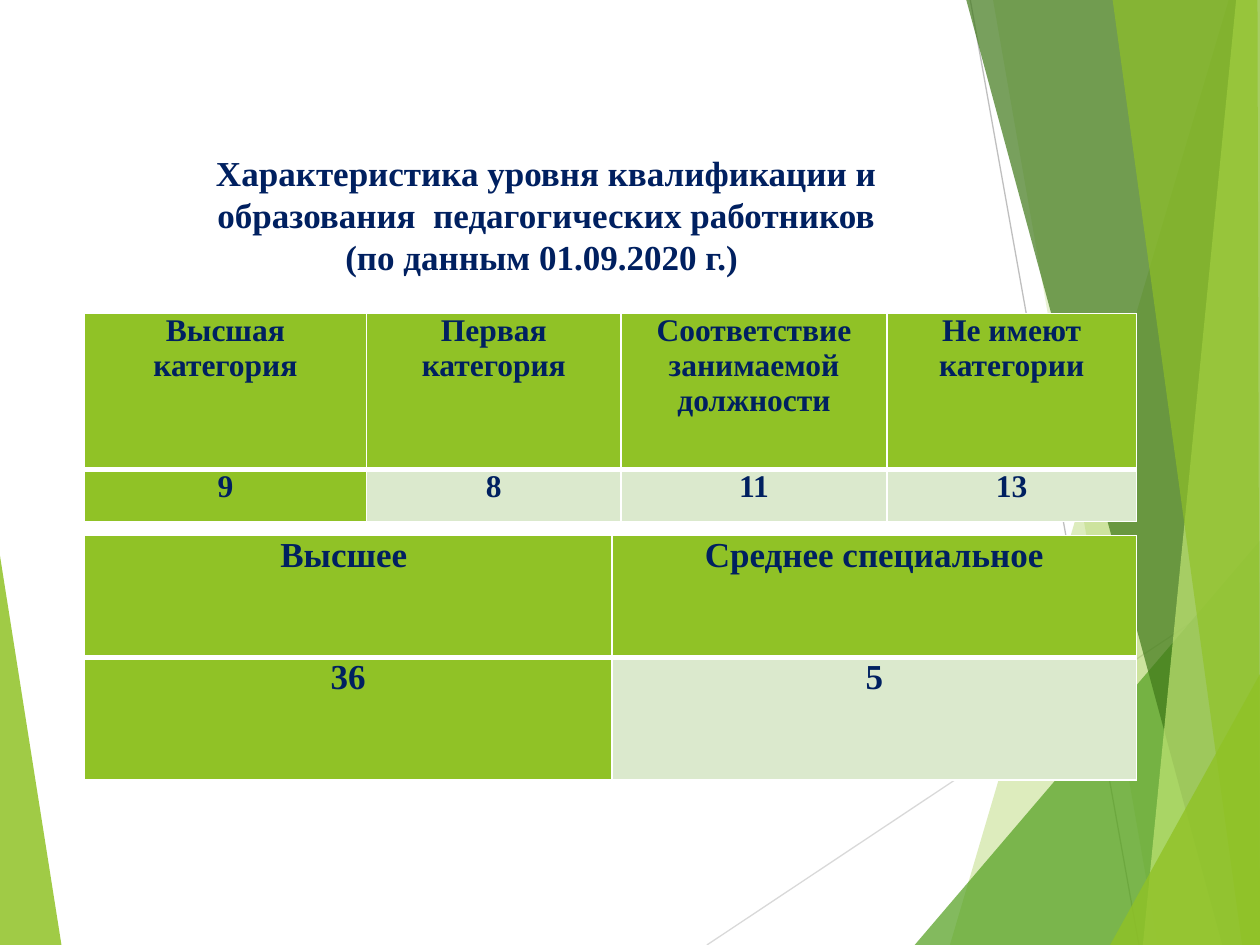
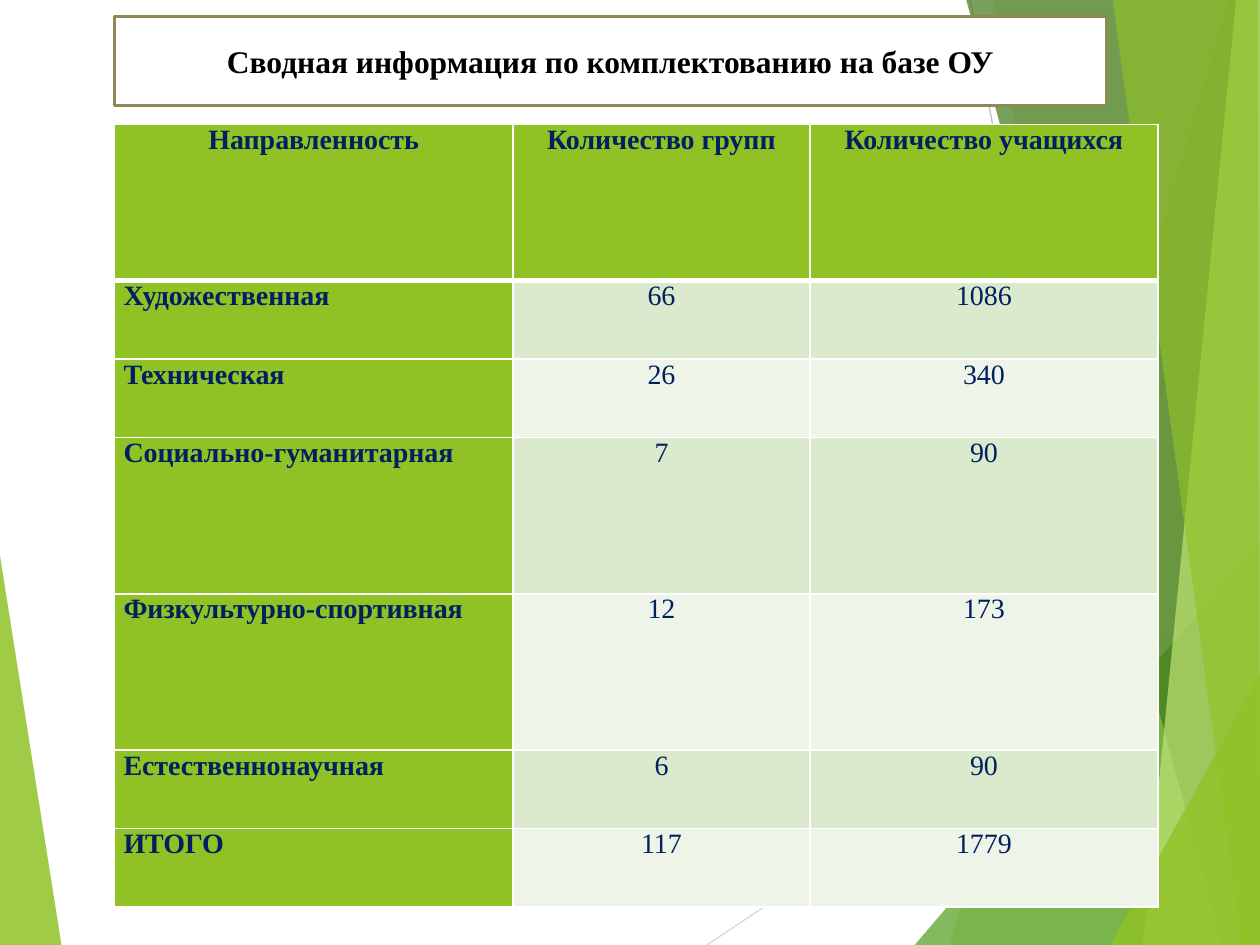
from lxml.etree import SubElement
from pptx import Presentation
from pptx.dml.color import RGBColor
from pptx.enum.shapes import MSO_CONNECTOR, MSO_SHAPE
from pptx.enum.text import MSO_ANCHOR, PP_ALIGN
from pptx.oxml.ns import qn
from pptx.util import Cm, Pt

SLIDE_WIDTH, SLIDE_HEIGHT = 25.4, 19.05
FONT = "Times New Roman"
GREEN, NAVY, WHITE, BLACK = "90C226", "002060", "FFFFFF", "000000"
BANDS = ["DBE9CD", "EEF4E8"]
TITLE_FORMAT = {"name": FONT, "bold": True}
CELL_MARGINS = {"margin_left": Cm(0.18), "margin_right": Cm(0.18),
                "margin_top": 0, "margin_bottom": 0}

FACET_LINES = [
    ("D9D9D9", (14.25, 19.05), (25.4, 11.63)),
    ("BFBFBF", (19.56, 0), (22.96, 19.05)),
]
FACETS = [
    (GREEN, 85, [(0, 11.2), (1.24, 19.05), (0, 19.05)]),
    (GREEN, 30, [(24.77, 0), (19.15, 19.05), (25.4, 19.05), (25.4, 0)]),
    (GREEN, 20, [(20.02, 0), (23.34, 19.05), (25.4, 19.05), (25.4, 0)]),
    ("54A021", 72, [(18.44, 19.05), (25.4, 10.9), (25.4, 19.05)]),
    ("3F7819", 70, [(19.48, 0), (24.64, 19.05), (25.4, 19.05), (25.4, 0)]),
    ("C0E474", 70, [(24.92, 0), (23.04, 19.05), (25.4, 19.05), (25.4, 0)]),
    (GREEN, 65, [(22.43, 0), (25.04, 19.05), (25.4, 19.05), (25.35, 0)]),
    (GREEN, 80, [(22.38, 19.05), (25.4, 13.59), (25.4, 19.05)]),
]


def color(value):
    return RGBColor.from_string(value)


def set_attributes(target, values):
    for name, value in values.items():
        setattr(target, name, value)


def fill_solid(target, value):
    target.fill.solid()
    target.fill.fore_color.rgb = color(value)


def write_lines(text_frame, lines, font_format, font_color, alignment=PP_ALIGN.CENTER):
    text_frame.word_wrap = True
    for index, line in enumerate(lines):
        paragraph = text_frame.paragraphs[0] if index == 0 else text_frame.add_paragraph()
        paragraph.alignment = alignment
        run = paragraph.add_run()
        run.text = line
        set_attributes(run.font, font_format)
        run.font.color.rgb = color(font_color)


def draw_facets(slide):
    for line_color, start, end in FACET_LINES:
        connector = slide.shapes.add_connector(
            MSO_CONNECTOR.STRAIGHT, *[Cm(length) for length in start + end])
        connector.line.color.rgb = color(line_color)
        connector.line.width = Pt(0.75)
        SubElement(connector._element.spPr, qn("a:effectLst"))
    for facet_color, opacity, corners in FACETS:
        points = [(Cm(x), Cm(y)) for x, y in corners]
        builder = slide.shapes.build_freeform(*points[0])
        builder.add_line_segments(points[1:], close=True)
        facet = builder.convert_to_shape()
        facet.shadow.inherit = False
        fill_solid(facet, facet_color)
        facet.line.fill.background()
        facet_fill = facet._element.spPr.find(qn("a:solidFill"))
        SubElement(facet_fill[0], qn("a:alpha"), val=str(opacity * 1000))


def add_faceted_slide(presentation):
    slide = presentation.slides.add_slide(presentation.slide_layouts[6])
    draw_facets(slide)
    return slide


def border_cell(cell, top, bottom):
    properties = cell._tc.get_or_add_tcPr()
    for side, width in (("lnL", 1), ("lnR", 1), ("lnT", top), ("lnB", bottom)):
        border = SubElement(properties, qn(f"a:{side}"), w=str(Pt(width)))
        border_fill = SubElement(border, qn("a:solidFill"))
        SubElement(border_fill, qn("a:srgbClr"), val=WHITE)


def draw_table(slide, left, top, widths, heights, rows, size, plain_body=False):
    frame = slide.shapes.add_table(len(rows), len(widths), Cm(left), Cm(top),
                                   Cm(sum(widths)), Cm(sum(heights)))
    table = frame.table
    for column, width in zip(table.columns, widths):
        column.width = Cm(width)
    for row, height in zip(table.rows, heights):
        row.height = Cm(height)
    for row_index, values in enumerate(rows):
        for column_index, value in enumerate(values):
            cell = table.cell(row_index, column_index)
            heading = row_index == 0 or column_index == 0
            row_label = plain_body and row_index > 0 and column_index == 0
            set_attributes(cell, CELL_MARGINS)
            border_cell(cell, 3 if row_index == 1 else 1, 3 if row_index == 0 else 1)
            fill_solid(cell, GREEN if heading else BANDS[(row_index - 1) % 2])
            font_format = {"name": FONT, "size": Pt(size), "bold": heading or not plain_body}
            write_lines(cell.text_frame, [value], font_format, NAVY,
                        PP_ALIGN.LEFT if row_label else PP_ALIGN.CENTER)


def draw_open_title(slide, left, top, width, height, lines):
    title = slide.shapes.add_textbox(Cm(left), Cm(top), Cm(width), Cm(height))
    title.text_frame.vertical_anchor = MSO_ANCHOR.MIDDLE
    write_lines(title.text_frame, lines, {**TITLE_FORMAT, "size": Pt(20)}, NAVY)


def draw_framed_title(slide, left, top, width, height, text):
    title = slide.shapes.add_shape(MSO_SHAPE.RECTANGLE, Cm(left), Cm(top),
                                   Cm(width), Cm(height))
    title.shadow.inherit = False
    fill_solid(title, WHITE)
    title.line.color.rgb = color("918655")
    title.line.width = Pt(1.5)
    title.text_frame.vertical_anchor = MSO_ANCHOR.MIDDLE
    write_lines(title.text_frame, [text], {**TITLE_FORMAT, "size": Pt(18)}, BLACK)


def build_staff_slide(presentation):
    slide = add_faceted_slide(presentation)
    draw_open_title(slide, 2.31, 2.92, 17.4, 2.82, [
        "Характеристика уровня квалификации и образования  педагогических работников",
        "(по данным 01.09.2020 г.) ",
    ])
    draw_table(slide, 1.7, 6.32, [5.69, 5.13, 5.36, 5.03], [3.15, 1.04], [
        ["Высшая категория", "Первая категория",
         "Соответствие занимаемой должности", "Не имеют категории"],
        ["9", "8", "11", "13"],
    ], 18)
    draw_table(slide, 1.7, 10.8, [10.64, 10.57], [2.46] * 2, [
        ["Высшее ", "Среднее специальное"],
        ["36", "5"],
    ], 20)


def build_enrolment_slide(presentation):
    slide = add_faceted_slide(presentation)
    single, double = 1.58, 3.15
    draw_table(slide, 2.31, 2.51, [8.03, 5.99, 7.01],
               [double, single, single, double, double, single, single], [
        ["Направленность", "Количество групп", "Количество учащихся"],
        ["Художественная", "66", "1086"],
        ["Техническая", "26", "340"],
        ["Социально-гуманитарная", "7", "90"],
        ["Физкультурно-спортивная", "12", "173"],
        ["Естественнонаучная", "6", "90"],
        ["ИТОГО", "117", "1779"],
    ], 16, plain_body=True)
    draw_framed_title(slide, 2.31, 0.33, 19.99, 1.8,
                      "Сводная информация по комплектованию на базе ОУ")


def main():
    presentation = Presentation()
    set_attributes(presentation, {"slide_width": Cm(SLIDE_WIDTH),
                                  "slide_height": Cm(SLIDE_HEIGHT)})
    build_staff_slide(presentation)
    build_enrolment_slide(presentation)
    presentation.save("out.pptx")


if __name__ == "__main__":
    main()
